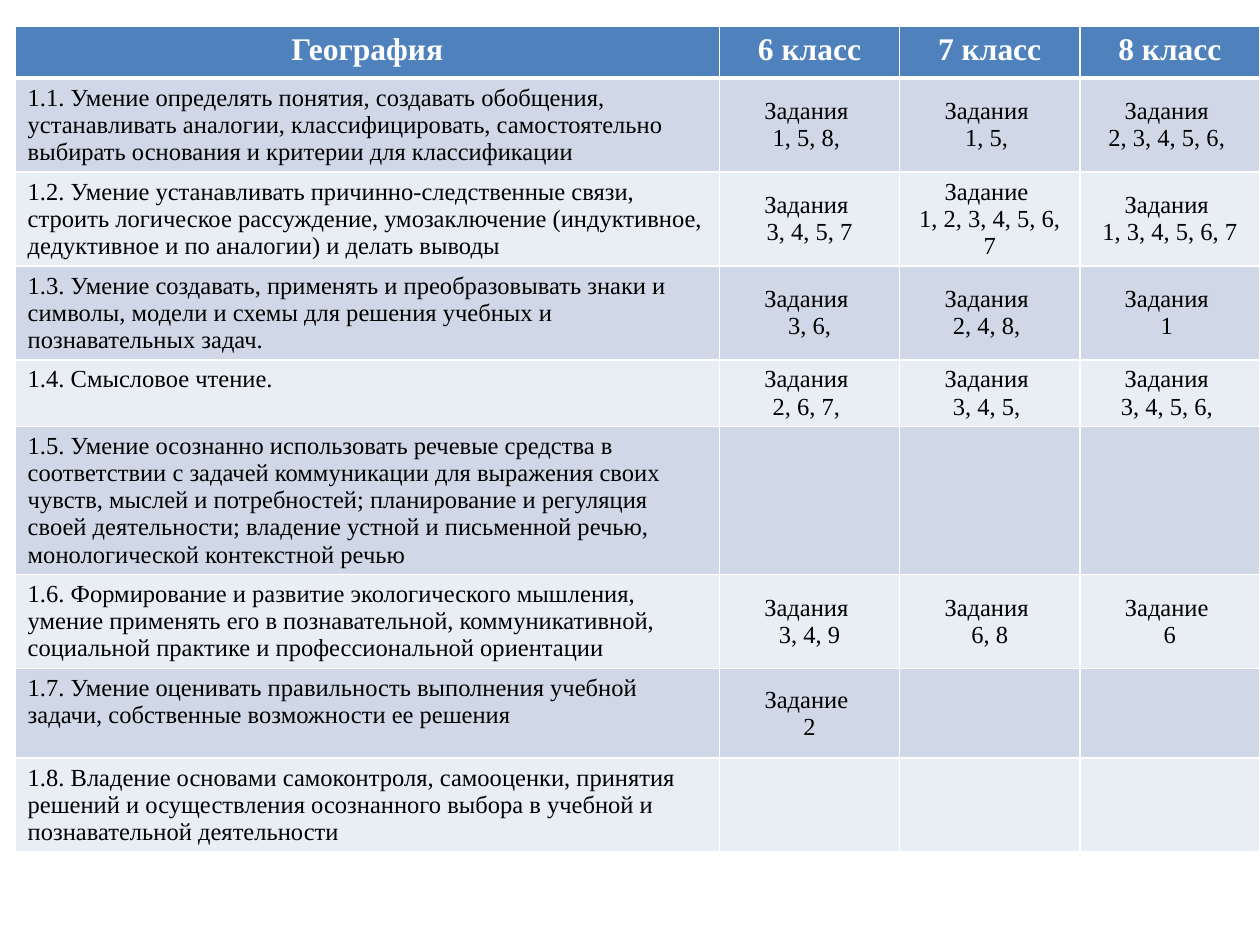
from dataclasses import dataclass

import lxml.etree
import pptx
import pptx.dml.color
import pptx.enum.text
import pptx.oxml.ns
import pptx.table
import pptx.util
from pptx.util import Inches

FONT = "Times New Roman"
WHITE, BLACK, HEADER_BLUE = "FFFFFF", "000000", "4F81BD"
BAND_FILLS = ("D0D8E8", "E9EDF4")
COLUMN_WIDTHS = (5.59, 1.43, 1.43, 1.43)
HEADER_HEIGHT = 0.41
HEADINGS = ("География", "6 класс", "7 класс", "8 класс")


@dataclass
class Skill:
    """A skill with its task lines for each class; an empty tuple means no tasks."""
    height: float
    text: str
    tasks: tuple[tuple[str, ...], ...]


SKILLS = (
    Skill(0.53, "1.1. Умение определять понятия, создавать обобщения, устанавливать аналогии, "
          "классифицировать, самостоятельно выбирать основания и критерии для классификации",
          (("Задания ", "1, 5, 8, "), ("Задания ", "1, 5, "), ("Задания ", "2, 3, 4, 5, 6, "))),
    Skill(0.55, "1.2. Умение устанавливать причинно-следственные связи, строить логическое "
          "рассуждение, умозаключение (индуктивное, дедуктивное и по аналогии) и делать выводы",
          (("Задания ", "3, 4, 5, 7"), ("Задание ", "1, 2, 3, 4, 5, 6, 7"),
           ("Задания ", "1, 3, 4, 5, 6, 7"))),
    Skill(0.41, "1.3. Умение создавать, применять и преобразовывать знаки и символы, модели и "
          "схемы для решения учебных и познавательных задач.",
          (("Задания ", "3, 6,"), ("Задания ", "2, 4, 8, "), ("Задания ", "1 "))),
    Skill(0.22, "1.4. Смысловое чтение.",
          (("Задания ", "2, 6, 7, "), ("Задания ", "3, 4, 5, "), ("Задания ", "3, 4, 5, 6, "))),
    Skill(0.58, "1.5. Умение осознанно использовать речевые средства в соответствии с задачей "
          "коммуникации для выражения своих чувств, мыслей и потребностей; планирование и "
          "регуляция своей деятельности; владение устной и письменной речью, "
          "монологической контекстной речью", ((), (), ())),
    Skill(0.63, "1.6. Формирование и развитие экологического мышления, умение применять его в "
          "познавательной, коммуникативной, социальной практике и профессиональной ориентации",
          (("Задания ", "3, 4, 9"), ("Задания ", "6, 8"), ("Задание ", "6"))),
    Skill(0.71, "1.7. Умение оценивать правильность выполнения учебной задачи, собственные "
          "возможности ее решения", (("Задание ", "2"), (), ())),
    Skill(0.71, "1.8. Владение основами самоконтроля, самооценки, принятия решений и "
          "осуществления осознанного выбора в учебной и познавательной деятельности",
          ((), (), ())),
)


def color(value: str) -> pptx.dml.color.RGBColor:
    return pptx.dml.color.RGBColor.from_string(value)


def style_cell(cell: pptx.table._Cell, fill: str, top: float = 1, bottom: float = 1) -> None:
    """Set white borders, with widths in points, and then the fill."""
    properties = cell._tc.get_or_add_tcPr()
    qn = pptx.oxml.ns.qn
    for side, width in (("L", 1), ("R", 1), ("T", top), ("B", bottom)):
        line = lxml.etree.SubElement(properties, qn(f"a:ln{side}"), w=str(pptx.util.Pt(width)))
        solid = lxml.etree.SubElement(line, qn("a:solidFill"))
        lxml.etree.SubElement(solid, qn("a:srgbClr"), val=WHITE)
    cell.fill.solid()
    cell.fill.fore_color.rgb = color(fill)


def write_cell(cell: pptx.table._Cell, lines: tuple[str, ...], size: float = 14,
               text_color: str = BLACK, bold: bool = False, centered: bool = True) -> None:
    for index, line in enumerate(lines):
        frame = cell.text_frame
        paragraph = frame.add_paragraph() if index else frame.paragraphs[0]
        if centered:
            paragraph.alignment = pptx.enum.text.PP_ALIGN.CENTER
        run = paragraph.add_run()
        run.text = line
        run.font.name = FONT
        run.font.size = pptx.util.Pt(size)
        run.font.bold = bold
        run.font.color.rgb = color(text_color)


def fill_header(table: pptx.table.Table) -> None:
    table.rows[0].height = Inches(HEADER_HEIGHT)
    for column, heading in enumerate(HEADINGS):
        cell = table.cell(0, column)
        style_cell(cell, HEADER_BLUE, bottom=3)
        write_cell(cell, (heading,), size=18, text_color=WHITE, bold=True)


def fill_skill(table: pptx.table.Table, row: int, skill: Skill) -> None:
    table.rows[row].height = Inches(skill.height)
    for column, lines in enumerate(((skill.text,), *skill.tasks)):
        cell = table.cell(row, column)
        style_cell(cell, BAND_FILLS[(row - 1) % 2], top=3 if row == 1 else 1)
        write_cell(cell, lines, centered=column > 0)
        if column and lines:
            cell.vertical_anchor = pptx.enum.text.MSO_ANCHOR.MIDDLE


def main() -> None:
    presentation = pptx.Presentation()
    presentation.slide_width = Inches(10)
    presentation.slide_height = Inches(7.5)
    slide = presentation.slides.add_slide(presentation.slide_layouts[6])
    table_shape = slide.shapes.add_table(len(SKILLS) + 1, len(COLUMN_WIDTHS), Inches(0.12),
                                         Inches(0.21), Inches(9.88), Inches(6.96))
    table = table_shape.table
    for column, width in zip(table.columns, COLUMN_WIDTHS):
        column.width = Inches(width)
    fill_header(table)
    for row, skill in enumerate(SKILLS, start=1):
        fill_skill(table, row, skill)
    table_shape.height = Inches(6.96)
    presentation.save("out.pptx")


if __name__ == "__main__":
    main()
